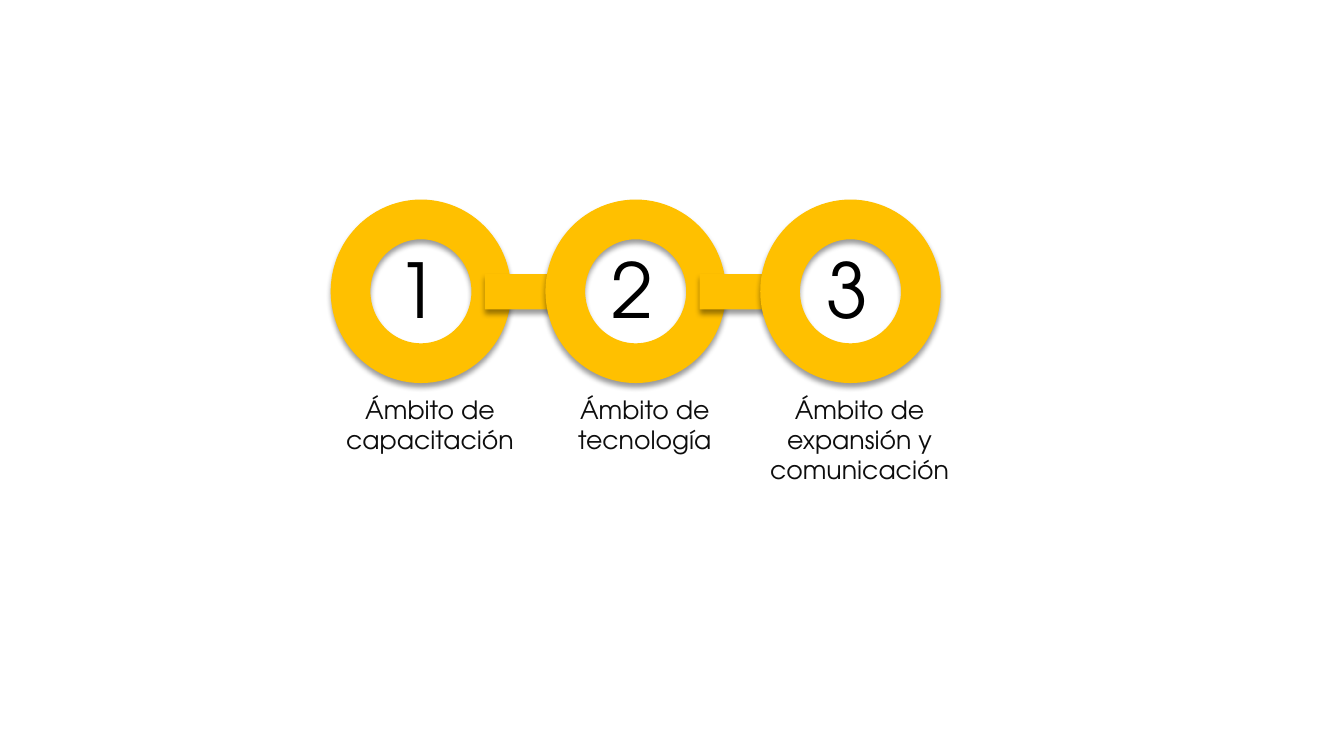
from lxml import etree
from pptx import Presentation
from pptx.dml.color import RGBColor
from pptx.enum.shapes import MSO_SHAPE
from pptx.enum.text import MSO_AUTO_SIZE, PP_ALIGN
from pptx.oxml.ns import qn
from pptx.util import Inches, Pt

DONUT, RECT = MSO_SHAPE.DONUT, MSO_SHAPE.RECTANGLE
CENTER, GROW = PP_ALIGN.CENTER, MSO_AUTO_SIZE.SHAPE_TO_FIT_TEXT

THEME = {
    "font": "TeX Gyre Adventor",
    "ring": RGBColor(0xFF, 0xC0, 0x00),
    "number": RGBColor(0x00, 0x00, 0x00),
    "label": RGBColor(0x0D, 0x0D, 0x0D),
    "number_size": Pt(54),
    "label_size": Pt(18),
}

LABELS = [
    "Ámbito de capacitación",
    "Ámbito de tecnología",
    "Ámbito de expansión y comunicación",
]

# Column grid, in inches: each step starts one pitch after the last.
LEFT, PITCH = 3.28, 2.13
RING_TOP, RING_W, RING_H = 1.98, 1.79, 1.82
LINK_DX, LINK_TOP, LINK_W, LINK_H = 1.53, 2.72, 0.79, 0.35
NUMBER_DX, NUMBER_TOP, NUMBER_W, NUMBER_H = 0.53, 2.36, 0.67, 1.01
LABEL_DX, LABEL_TOP, LABEL_W = -0.02, 3.86, 2.01
LABEL_PAD, LABEL_LINE = 0.11, 0.3


def add_text(x, y, w, h, text, style):
    tf = slide.shapes.add_textbox(*map(Inches, (x, y, w, h))).text_frame
    tf.word_wrap = True
    tf.auto_size = GROW
    p = tf.paragraphs[0]
    p.text = text
    p.alignment = CENTER
    p.font.name = THEME["font"]
    p.font.size = THEME[style + "_size"]
    p.font.color.rgb = THEME[style]


def add_yellow_shape(kind, x, y, w, h):
    """Add a borderless yellow shape with a soft shadow below it."""
    sp = slide.shapes.add_shape(kind, *map(Inches, (x, y, w, h)))
    sp.fill.solid()
    sp.fill.fore_color.rgb = THEME["ring"]
    sp.line.fill.background()
    sp.shadow.inherit = False
    effects = sp._element.spPr.find(qn("a:effectLst"))
    shadow = etree.SubElement(
        effects, qn("a:outerShdw"), blurRad=str(Pt(4)), dist=str(Pt(3)),
        dir="5400000", rotWithShape="0")
    color = etree.SubElement(shadow, qn("a:srgbClr"), val="000000")
    etree.SubElement(color, qn("a:alpha"), val="40000")
    return sp


prs = Presentation()
prs.slide_width, prs.slide_height = Inches(13.33), Inches(7.5)
slide = prs.slides.add_slide(prs.slide_layouts[6])

for i, label in enumerate(LABELS):
    x = LEFT + i * PITCH
    last = i == len(LABELS) - 1
    lines = 3 if last else 2
    add_text(x + LABEL_DX, LABEL_TOP, LABEL_W,
             LABEL_PAD + lines * LABEL_LINE, label, "label")
    add_text(x + NUMBER_DX, NUMBER_TOP, NUMBER_W, NUMBER_H,
             str(i + 1), "number")
    ring = add_yellow_shape(DONUT, x, RING_TOP, RING_W, RING_H)
    ring.adjustments[0] = 0.22
    if not last:
        add_yellow_shape(RECT, x + LINK_DX, LINK_TOP, LINK_W, LINK_H)

prs.save("out.pptx")
